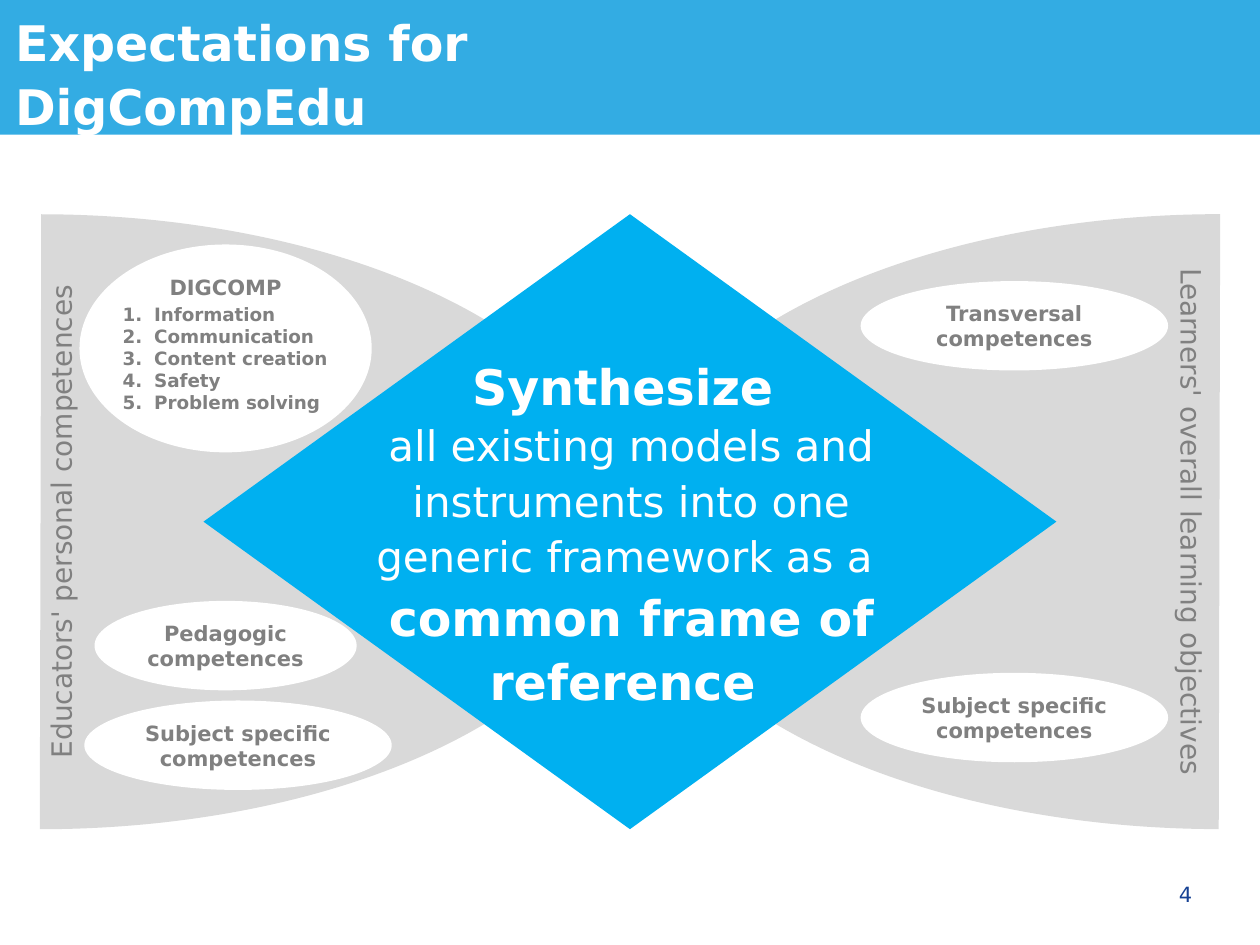
from lxml.etree import SubElement
from pptx import Presentation
from pptx.dml.color import RGBColor
from pptx.enum.shapes import MSO_SHAPE as SHAPE
from pptx.enum.text import MSO_ANCHOR as ANCHOR, MSO_AUTO_SIZE as AUTO, PP_ALIGN as ALIGN
from pptx.oxml.ns import qn
from pptx.util import Pt

FONT = "DejaVu Sans"
COLORS = {"band": "33ACE3", "wing": "D9D9D9", "white": "FFFFFF",
          "gray": "808080", "diamond": "00B0F0", "number": "164194"}
INSET = (7.2, 3.6, 7.2, 3.6)


def color(name):
    return RGBColor.from_string(COLORS[name])


def add_shape(s, kind, box, fill=None):
    sp = s.shapes.add_shape(kind, *map(Pt, box))
    sp.shadow.inherit = False
    sp.line.fill.background()
    if fill:
        sp.fill.solid()
        sp.fill.fore_color.rgb = color(fill)
    else:
        sp.fill.background()
    return sp


def set_frame(tf, inset=INSET, anchor=ANCHOR.TOP, auto=AUTO.NONE):
    sides = ("left", "top", "right", "bottom")
    frame = {f"margin_{side}": Pt(v) for side, v in zip(sides, inset)}
    frame.update(word_wrap=True, vertical_anchor=anchor, auto_size=auto)
    for name, value in frame.items():
        setattr(tf, name, value)


def write(tf, text, size, ink, bold=False, align=ALIGN.CENTER, spacing=None):
    """Fill the frame with one paragraph per line of text, all in one format."""
    tf.text = text
    for p in tf.paragraphs:
        format_paragraph(p, size, ink, bold, align, spacing)


def format_paragraph(p, size, ink, bold, align, spacing=None):
    p.alignment = align
    p.line_spacing = spacing
    p.space_before = p.space_after = Pt(0)
    for r in p.runs:
        font = {"name": FONT, "size": Pt(size), "bold": bold}
        for name, value in font.items():
            setattr(r.font, name, value)
        r.font.color.rgb = color(ink)


def add_text_box(s, box, **frame):
    sp = s.shapes.add_textbox(*map(Pt, box))
    set_frame(sp.text_frame, **frame)
    return sp


def add_header(s, box):
    x, y, w, h = box
    add_shape(s, SHAPE.RECTANGLE, box, "band")
    title = s.shapes.title
    place = {"left": x + 8.64, "top": y + 3.6, "width": w - 73.4, "height": 51.1}
    for name, value in place.items():
        setattr(title, name, Pt(value))
    set_frame(title.text_frame, inset=(0, 0, 0, 0))
    write(title.text_frame, "Expectations for\vDigCompEdu", 28, "white", True,
          ALIGN.LEFT, 1.1)
    tree = title._element.getparent()
    tree.append(title._element)  # in front of the band


def add_wing(s, box, label, label_center, flipped):
    """Half ellipse opening to the outer edge, with a vertical label."""
    x, y, w, h = box
    chord = add_shape(s, SHAPE.CHORD, box, "wing")
    chord.adjustments[0], chord.adjustments[1] = 54.162, 162
    chord.rotation = 180 if flipped else 0
    text_w, text_h = h, 26.6
    sp = add_text_box(s, (label_center - text_w / 2, y + h / 2 - text_h / 2,
                          text_w, text_h), auto=AUTO.SHAPE_TO_FIT_TEXT)
    sp.rotation = 270 if flipped else 90
    write(sp.text_frame, label, 16, "gray")


def add_competence(s, box, text):
    tf = add_shape(s, SHAPE.OVAL, box, "white").text_frame
    set_frame(tf, anchor=ANCHOR.MIDDLE)
    write(tf, text, 12, "gray", True)


def add_digcomp(s, box, items):
    x, y, w, h = box
    tf = add_shape(s, SHAPE.OVAL, box, "white").text_frame
    set_frame(tf, inset=(7.2, 0, 7.2, 3.6))
    write(tf, "DIGCOMP", 12, "gray", True)

    tf = add_shape(s, SHAPE.OVAL, (x - 2.9, y + 28.1, w + 21.6, 73.4)).text_frame
    set_frame(tf, inset=(0, 3.6, 0, 3.6), anchor=ANCHOR.MIDDLE)
    tf.text = "\n".join(items)
    for p in tf.paragraphs:
        pPr = p._p.get_or_add_pPr()
        pPr.set("marL", str(Pt(18)))
        pPr.set("indent", str(-Pt(18)))
        SubElement(pPr, qn("a:buFont"), typeface="+mj-lt")
        SubElement(pPr, qn("a:buAutoNum"), type="arabicPeriod")
        format_paragraph(p, 10.5, "gray", True, ALIGN.LEFT)


def add_synthesis(s, box):
    x, y, w, h = box
    add_shape(s, SHAPE.DIAMOND, box, "diamond")
    lines = [("Synthesize ", 28, True),
             ("all existing models and instruments into one "
              "generic framework as a ", 24, False),
             ("common frame of reference ", 28, True)]
    sp = add_text_box(s, (x + 79.9, y + 74.2, 329, 215.3),
                      auto=AUTO.SHAPE_TO_FIT_TEXT)
    tf = sp.text_frame
    tf.text = "\n".join(text for text, _, _ in lines)
    for p, (_, size, bold) in zip(tf.paragraphs, lines):
        format_paragraph(p, size, "white", bold, ALIGN.CENTER, 1.1)


def add_page_number(s, box, number):
    sp = add_text_box(s, box, inset=(7.2, 0, 7.2, 0), anchor=ANCHOR.MIDDLE)
    write(sp.text_frame, number, 12, "number", align=ALIGN.RIGHT)


def main():
    prs = Presentation()
    prs.slide_width, prs.slide_height = Pt(720), Pt(540)
    s = prs.slides.add_slide(prs.slide_layouts[5])

    add_header(s, (0, 0, 720, 77))
    middle, top, wing_w, height = 360, 122.4, 674.6, 351.4
    add_wing(s, (middle - wing_w, top, wing_w, height),
             "Educators' personal competences", 34.9, True)
    add_wing(s, (middle, top, wing_w, height),
             "Learners' overall learning objectives", 680.8, False)

    for x, y, w, text in [
            (48.2, 400.3, 175.7, "Subject specific\ncompetences"),
            (491.8, 160.6, 175.7, "Transversal\ncompetences"),
            (491.8, 384.5, 175.7, "Subject specific\ncompetences"),
            (54, 343.4, 149.8, "Pedagogic competences")]:
        add_competence(s, (x, y, w, 51.1), text)

    diamond_w = 487.4
    add_synthesis(s, (middle - diamond_w / 2, top, diamond_w, height))
    add_digcomp(s, (45.4, 139.7, 167, 118.8),
                ["Information", "Communication", "Content creation",
                 "Safety", "Problem solving"])
    add_page_number(s, (520.6, 496.8, 167.8, 28.8), "4")
    prs.save("out.pptx")


if __name__ == "__main__":
    main()
